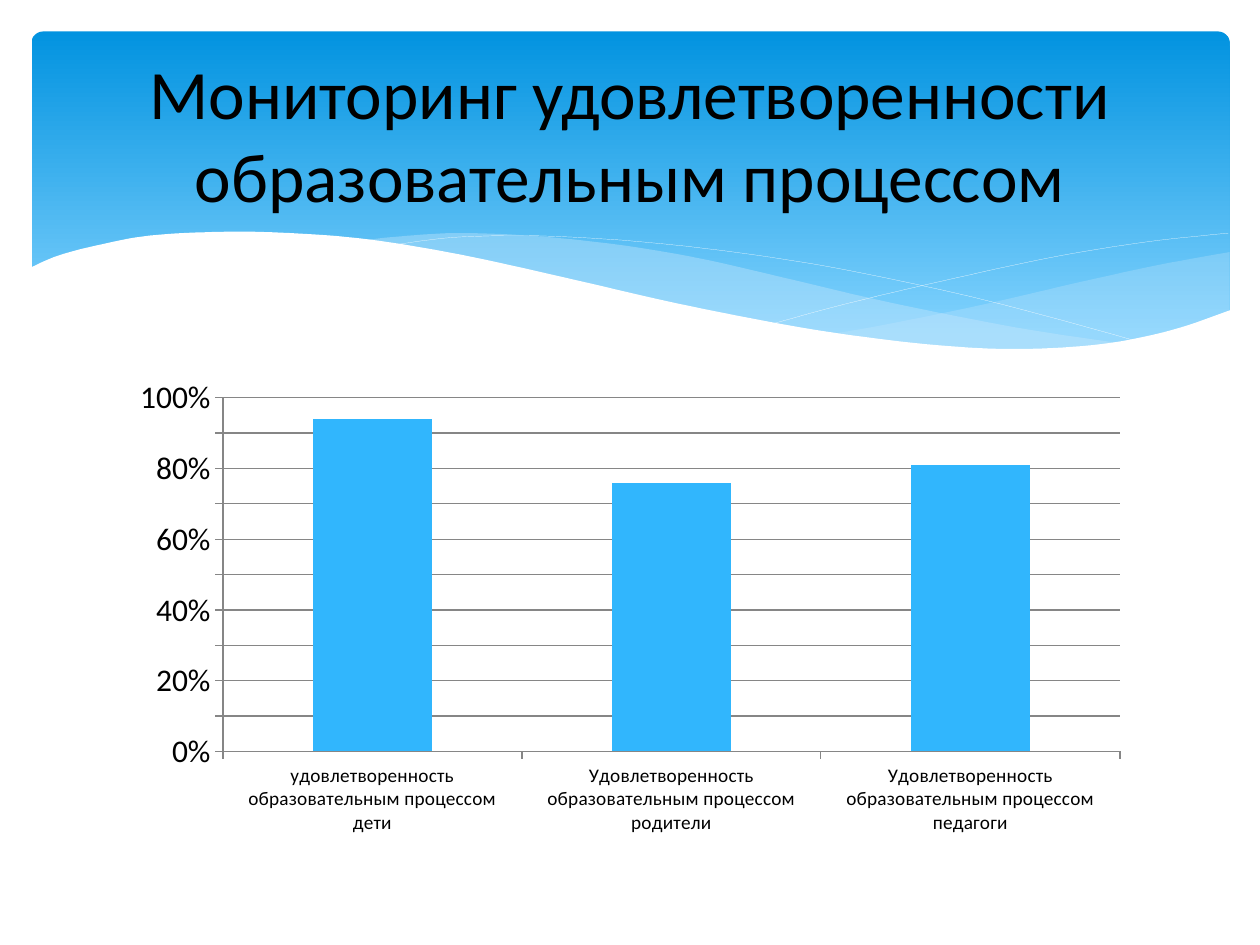
from lxml import etree
from pptx import Presentation
from pptx.chart.data import CategoryChartData
from pptx.dml.color import RGBColor
from pptx.enum.chart import XL_CHART_TYPE, XL_TICK_MARK
from pptx.enum.shapes import MSO_SHAPE
from pptx.enum.text import MSO_ANCHOR, PP_ALIGN
from pptx.oxml.ns import qn
from pptx.util import Inches, Pt

STACKED = XL_CHART_TYPE.COLUMN_STACKED
OUTSIDE = XL_TICK_MARK.OUTSIDE
ROUND = MSO_SHAPE.ROUNDED_RECTANGLE
MIDDLE, CENTER = MSO_ANCHOR.MIDDLE, PP_ALIGN.CENTER

WHITE = RGBColor(0xFF, 0xFF, 0xFF)
BLACK = RGBColor(0, 0, 0)
DEEP = RGBColor(0x02, 0x93, 0xE0)
LIGHT = RGBColor(0x83, 0xD3, 0xFE)
PALE = RGBColor(0xC6, 0xE7, 0xFC)
BAR = RGBColor(0x31, 0xB6, 0xFD)
GRID = RGBColor(0x86, 0x86, 0x86)
FONT = "Calibri"

# Content
TITLE = "Мониторинг удовлетворенности образовательным процессом"
RATES = [
    ("удовлетворенность образовательным процессом дети", 0.94),
    ("Удовлетворенность образовательным процессом родители", 0.76),
    ("Удовлетворенность образовательным процессом педагоги", 0.81),
]

# Boxes: left, top, width, height in inches
BAND_BOX = (0.25, 0.25, 9.51, 2.7)
CHART_BOX = (0.95, 2.93, 8.1, 3.77)
TITLE_BOX = (0.5, 0.37, 9, 1.37)

# Wave edges: knots in inches, each edge drawn as one smooth curve
RIGHT_TOP = [(9.76, 2), (9.21, 2.1), (8.61, 2.23), (7.79, 2.42),
             (7.06, 2.57), (6.61, 2.65)]
RIGHT_LOW = [(6.61, 2.65), (7.19, 2.72), (7.81, 2.77), (8.35, 2.77),
             (8.89, 2.72), (9.35, 2.62), (9.76, 2.47)]
LEFT_TOP = [(8.93, 2.73), (8.07, 2.6), (7.06, 2.4), (6.29, 2.22),
            (5.55, 2.05), (4.89, 1.94), (4.2, 1.87), (3.61, 1.85),
            (3.13, 1.88), (2.86, 1.91)]
LEFT_LOW = [(2.86, 1.91), (3.62, 2.03), (4.49, 2.22), (5.3, 2.4),
            (6.01, 2.55), (6.8, 2.68), (7.48, 2.76), (8.18, 2.78),
            (8.93, 2.73)]
FALL = [(3.09, 1.95), (3.53, 1.89), (4.01, 1.87), (4.5, 1.88), (5.1, 1.92),
        (5.82, 2), (6.65, 2.13), (7.6, 2.33), (8.31, 2.51), (9.07, 2.72)]
RISE = [(6.13, 2.57), (6.72, 2.41), (7.48, 2.23), (8.36, 2.04),
        (9.1, 1.92), (9.75, 1.85)]
FRONT = [(9.77, 2.46), (9.3, 2.62), (8.75, 2.73), (8.09, 2.77),
         (7.44, 2.74), (6.68, 2.65), (6.03, 2.54), (5.29, 2.39),
         (4.47, 2.2), (3.65, 2.02), (2.92, 1.9), (2.3, 1.85), (1.77, 1.84),
         (1.19, 1.87), (0.76, 1.95), (0.46, 2.03), (0.23, 2.13)]
BASE = [(0.23, 3.29), (9.77, 3.29)]

# Filled waves and thin lines from back to front: edges, fill, opacity in %
WAVES = [
    ([RIGHT_TOP, RIGHT_LOW], PALE, 29),
    ([LEFT_TOP, LEFT_LOW], PALE, 40),
    ([FALL], None, 100),
    ([RISE], None, 100),
    ([FRONT, BASE], WHITE, 100),
]
STEPS = 8     # straight pieces between two knots
UNITS = 1000  # freeform units in an inch


def place(box):
    return [Inches(v) for v in box]


def blend(a, b, c, d, t):
    """Catmull-Rom value between b and c, at share t of the way."""
    return b + t / 2 * (c - a + t * (2 * a - 5 * b + 4 * c - d
                                     + t * (3 * (b - c) + d - a)))


def smooth(knots):
    """Points of a curve that passes through every knot."""
    ends = [knots[0], *knots, knots[-1]]
    curve = [knots[0]]
    for four in zip(ends, ends[1:], ends[2:], ends[3:]):
        xs, ys = zip(*four)
        for step in range(1, STEPS + 1):
            t = step / STEPS
            curve.append((blend(*xs, t), blend(*ys, t)))
    return curve


def add_band(slide):
    band = slide.shapes.add_shape(ROUND, *place(BAND_BOX))
    band.adjustments[0] = 0.034
    band.shadow.inherit = False
    band.line.fill.background()
    band.fill.gradient()
    band.fill.gradient_angle = 270
    stops = zip(band.fill.gradient_stops, (0, 0.9), (DEEP, LIGHT))
    for stop, pos, color in stops:
        stop.position = pos
        stop.color.rgb = color


def add_wave(slide, edges, color, alpha):
    # Freeform points are whole numbers, so inches become fine units
    points = [(x * UNITS, y * UNITS) for edge in edges for x, y in smooth(edge)]
    pen = slide.shapes.build_freeform(*points[0], scale=Inches(1) / UNITS)
    pen.add_line_segments(points[1:], close=color is not None)
    wave = pen.convert_to_shape()
    wave.shadow.inherit = False
    if color is None:
        wave.fill.background()
        wave.line.color.rgb = WHITE
        wave.line.width = Pt(0.1)
        return
    wave.line.fill.background()
    wave.fill.solid()
    wave.fill.fore_color.rgb = color
    if alpha < 100:
        tone = wave._element.spPr.find(".//" + qn("a:srgbClr"))
        etree.SubElement(tone, qn("a:alpha")).set("val", str(alpha * 1000))


def add_rates(slide):
    data = CategoryChartData(number_format="0%")
    data.add_series("Series 1", [rate for name, rate in RATES])
    data.categories = [name for name, rate in RATES]
    chart = slide.shapes.add_chart(STACKED, *place(CHART_BOX), data).chart
    chart.has_legend = chart.has_title = False
    chart.font.size = Pt(18)
    chart.font.name = FONT
    chart.font.color.rgb = BLACK

    # Bars
    plot = chart.plots[0]
    plot.vary_by_categories = False
    plot.gap_width, plot.overlap = 150, 100
    bars = plot.series[0].format.fill
    bars.solid()
    bars.fore_color.rgb = BAR

    # Axes and grid
    cats, vals = chart.category_axis, chart.value_axis
    vals.has_major_gridlines = True
    for part in (cats, vals, vals.major_gridlines):
        part.format.line.color.rgb = GRID
    for axis in (cats, vals):
        axis.major_tick_mark = OUTSIDE
    cats.tick_labels.font.size = Pt(11)
    vals.minimum_scale, vals.maximum_scale, vals.major_unit = 0, 1, 0.1
    vals.tick_labels.number_format = "0%"
    vals.tick_labels.number_format_is_linked = False


def add_title(slide):
    title = slide.shapes.title
    title.left, title.top, title.width, title.height = place(TITLE_BOX)
    text = title.text_frame
    text.word_wrap = True
    text.vertical_anchor = MIDDLE
    para = text.paragraphs[0]
    para.alignment = CENTER
    run = para.add_run()
    run.text = TITLE
    run.font.size = Pt(39.6)
    run.font.name = FONT
    run.font.color.rgb = BLACK
    # Bring the title in front of the band
    slide.shapes._spTree.append(title._element)


def main():
    deck = Presentation()
    deck.slide_width, deck.slide_height = place((10, 7.5))
    slide = deck.slides.add_slide(deck.slide_layouts[5])
    add_band(slide)
    for edges, color, alpha in WAVES:
        add_wave(slide, edges, color, alpha)
    add_rates(slide)
    add_title(slide)
    deck.save("out.pptx")


if __name__ == "__main__":
    main()
